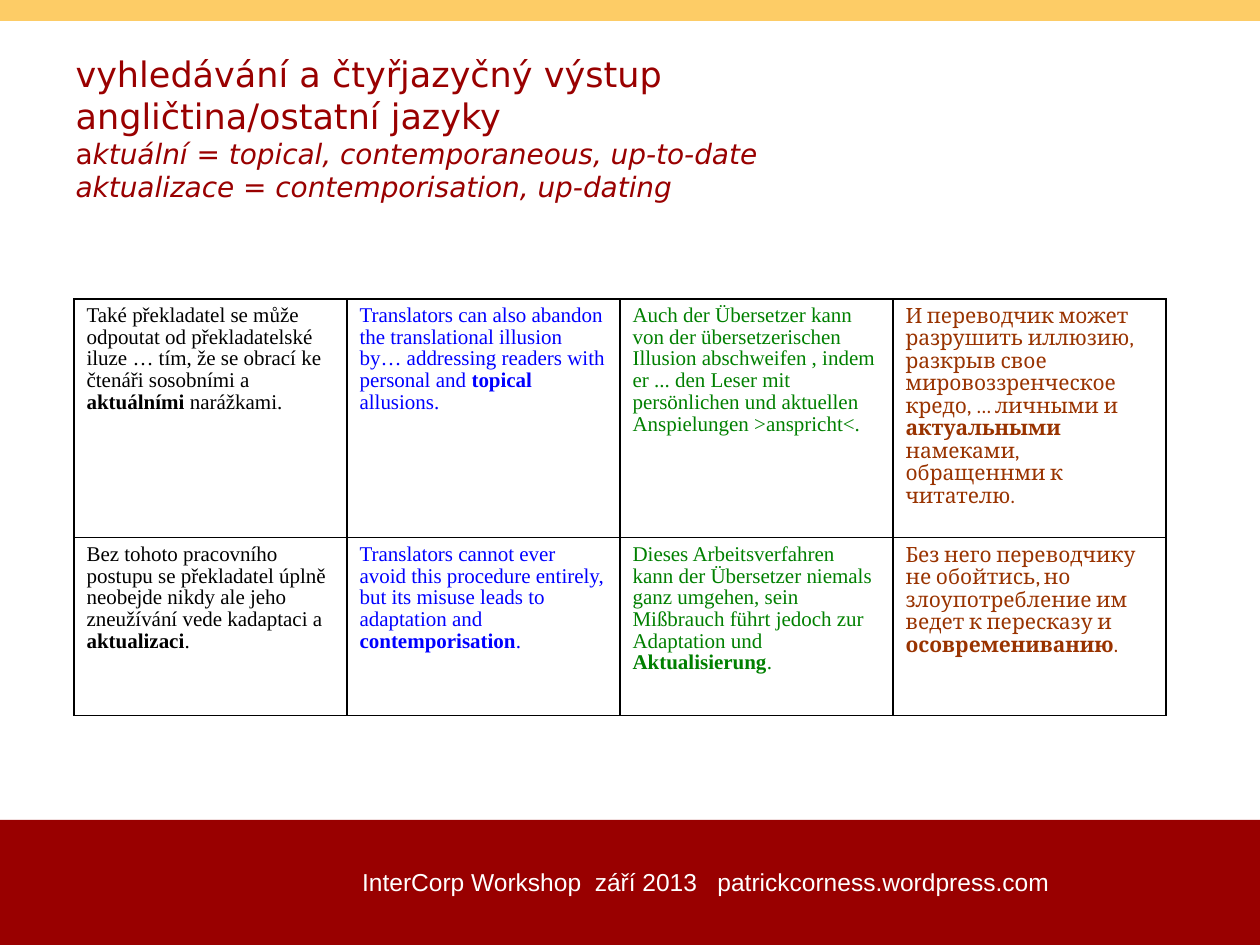
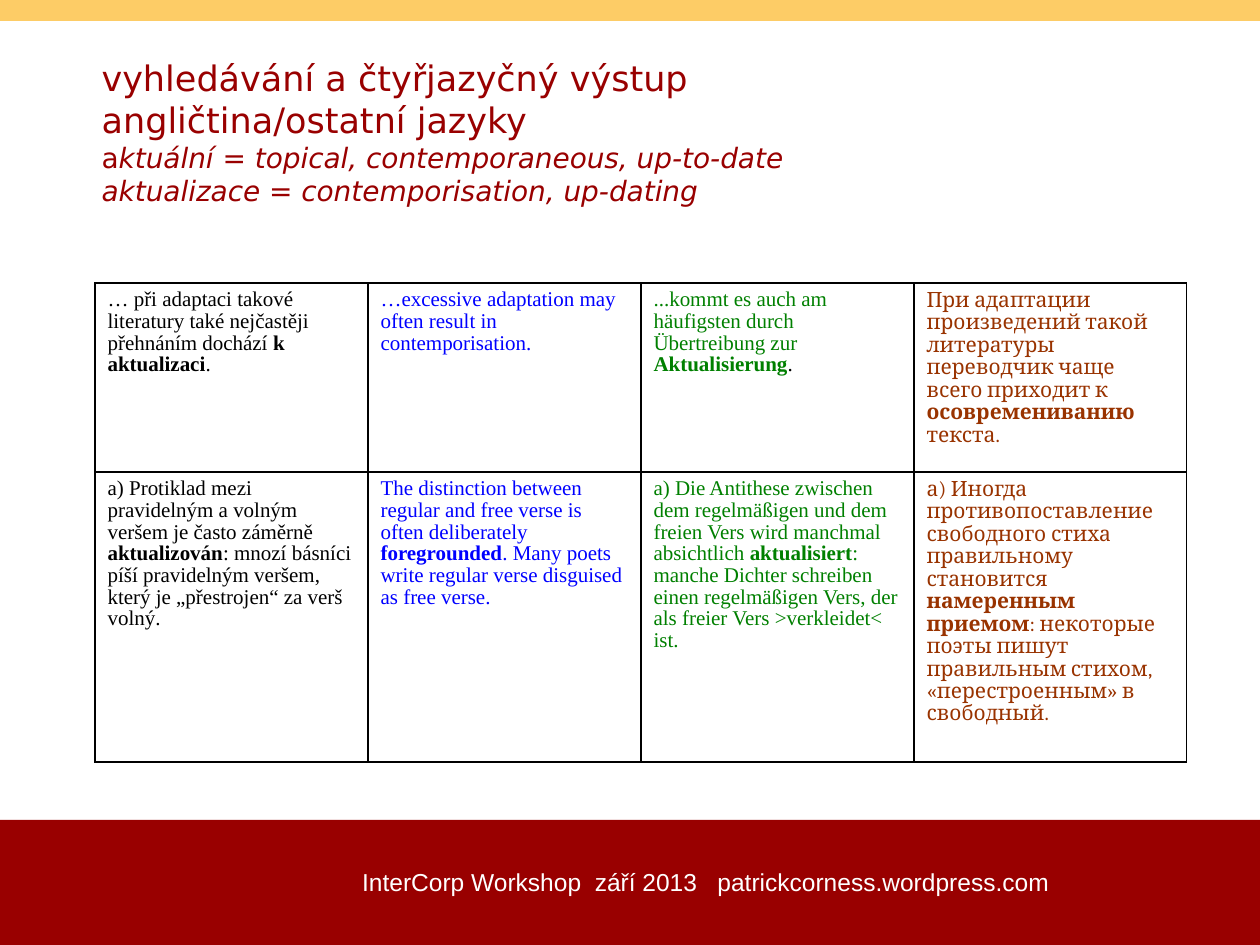
from copy import deepcopy
from typing import NamedTuple

import pptx
import pptx.dml.color
import pptx.enum.shapes
import pptx.enum.text
import pptx.oxml
import pptx.oxml.ns
import pptx.util

PX_PER_INCH = 126
SLIDE_WIDTH, SLIDE_HEIGHT = 1260, 945
TITLE_ONLY_LAYOUT = 5
COLUMN_WIDTH = 273
BORDER_WIDTH = pptx.util.Pt(0.75)
LINE_SPACING = 0.93

COLORS = {
    "maroon": "990000",
    "gold": "FDCC66",
    "white": "FFFFFF",
    "black": "000000",
    "blue": "0000FF",
    "green": "008000",
    "brown": "993300",
}

FOOTER = "InterCorp Workshop  září 2013   patrickcorness.wordpress.com"


class Box(NamedTuple):
    left: int
    top: int
    width: int
    height: int

    def emu(self) -> list[int]:
        return [px(length) for length in self]


class Style(NamedTuple):
    font: str
    size: int
    color: str
    bold: bool = False
    italic: bool = False


class Band(NamedTuple):
    box: Box
    color: str


class Excerpt(NamedTuple):
    """A passage in one language, with its keyword in bold."""
    before: str
    keyword: str = ""
    after: str = ""
    after_color: str = ""


class Page(NamedTuple):
    title_box: Box
    table_left: int
    table_top: int
    row_heights: list[int]
    rows: list[list[Excerpt]]


BANDS = [
    Band(Box(0, 820, SLIDE_WIDTH, 125), "maroon"),
    Band(Box(0, 0, SLIDE_WIDTH, 21), "gold"),
]
FOOTER_BOX = Box(324, 861, 764, 72)
FOOTER_STYLE = Style("Arial", 14, "white")

HEADING = Style("DejaVu Sans", 20, "maroon")
GLOSS = HEADING._replace(size=16)
GLOSS_ITALIC = GLOSS._replace(italic=True)
TITLE_LINES = [
    [("vyhledávání a čtyřjazyčný výstup", HEADING)],
    [("angličtina/ostatní jazyky", HEADING)],
    [("a", GLOSS),
     ("ktuální = topical, contemporaneous, up-to-date", GLOSS_ITALIC)],
    [("aktualizace = contemporisation, up-dating", GLOSS_ITALIC)],
]

# Czech, English, German, Russian
LANGUAGE_STYLES = [
    Style("Times New Roman", 12, "black"),
    Style("Times New Roman", 12, "blue"),
    Style("Times New Roman", 12, "green"),
    Style("Cambria", 12, "brown"),
]

PAGES = [
    Page(Box(63, 45, 1125, 166), 74, 299, [239, 178], [
        [
            Excerpt("Také překladatel se může odpoutat od překladatelské iluze … "
                    "tím, že se obrací ke čtenáři sosobními a ",
                    "aktuálními", " narážkami."),
            Excerpt("Translators can also abandon the translational illusion by… "
                    "addressing readers with personal and ",
                    "topical", " allusions."),
            Excerpt("Auch der Übersetzer kann von der übersetzerischen Illusion "
                    "abschweifen , indem er ... den Leser mit persönlichen und "
                    "aktuellen Anspielungen >anspricht<."),
            Excerpt("И переводчик может разрушить иллюзию, разкрыв свое "
                    "мировоззренческое кредо, … личными и ",
                    "актуальными", " намеками, обращеннми к читателю."),
        ],
        [
            Excerpt("Bez tohoto pracovního postupu se překladatel úplně neobejde "
                    "nikdy ale jeho zneužívání vede kadaptaci a ",
                    "aktualizaci", "."),
            Excerpt("Translators cannot ever avoid this procedure entirely, but "
                    "its misuse leads to adaptation and ",
                    "contemporisation", "."),
            Excerpt("Dieses Arbeitsverfahren kann der Übersetzer niemals ganz "
                    "umgehen, sein Mißbrauch führt jedoch zur Adaptation und ",
                    "Aktualisierung", "."),
            Excerpt("Без него переводчику не обойтись, но злоупотребление им "
                    "ведет к пересказу и ",
                    "осовремениванию", "."),
        ],
    ]),
    Page(Box(89, 49, 1071, 166), 95, 283, [189, 290], [
        [
            Excerpt("… při adaptaci takové literatury také nejčastěji přehnáním "
                    "dochází ", "k aktualizaci", "."),
            Excerpt("…excessive adaptation may often result in contemporisation."),
            Excerpt("...kommt es auch am häufigsten durch Übertreibung zur ",
                    "Aktualisierung", ".", "black"),
            Excerpt("При адаптации произведений такой литературы переводчик чаще "
                    "всего приходит к ", "осовремениванию ", "текста."),
        ],
        [
            Excerpt("a) Protiklad mezi pravidelným a volným veršem je často "
                    "záměrně ", "aktualizován",
                    ": mnozí básníci píší pravidelným veršem, který je "
                    "„přestrojen“ za verš volný."),
            Excerpt("The distinction between regular and free verse is often "
                    "deliberately ", "foregrounded",
                    ". Many poets write regular verse disguised as free verse."),
            Excerpt("a) Die Antithese zwischen dem regelmäßigen und dem freien "
                    "Vers wird manchmal absichtlich ", "aktualisiert",
                    ": manche Dichter schreiben einen regelmäßigen Vers, der als "
                    "freier Vers >verkleidet< ist."),
            Excerpt("а) Иногда противопоставление свободного стиха правильному "
                    "становится ", "намеренным приемом",
                    ": некоторые поэты пишут правильным стихом, "
                    "«перестроенным» в свободный."),
        ],
    ]),
]


def px(length: int) -> int:
    return round(length * pptx.util.Inches(1) / PX_PER_INCH)


def rgb(color: str) -> pptx.dml.color.RGBColor:
    return pptx.dml.color.RGBColor.from_string(COLORS[color])


def add_run(paragraph, text: str, style: Style):
    run = paragraph.add_run()
    run.text = text
    run.font.name = style.font
    run.font.size = pptx.util.Pt(style.size)
    run.font.bold = style.bold
    run.font.italic = style.italic
    run.font.color.rgb = rgb(style.color)
    return run


def move_bands_to_layout(slide) -> None:
    """Draw the bands on a slide, then hand them to its layout for all slides."""
    for position, band in enumerate(BANDS, start=2):
        shape = slide.shapes.add_shape(
            pptx.enum.shapes.MSO_SHAPE.RECTANGLE, *band.box.emu())
        shape.shadow.inherit = False
        shape.fill.solid()
        shape.fill.fore_color.rgb = rgb(band.color)
        shape.line.fill.background()
        slide.slide_layout.shapes.element.insert(position, shape.element)


def add_footer(slide) -> None:
    frame = slide.shapes.add_textbox(*FOOTER_BOX.emu()).text_frame
    frame.word_wrap = True
    paragraph = frame.paragraphs[0]
    paragraph.alignment = pptx.enum.text.PP_ALIGN.CENTER
    add_run(paragraph, FOOTER, FOOTER_STYLE)


def fill_title(slide, box: Box) -> None:
    title = slide.shapes.title
    title.left, title.top, title.width, title.height = box.emu()
    frame = title.text_frame
    frame.auto_size = pptx.enum.text.MSO_AUTO_SIZE.NONE
    frame.vertical_anchor = pptx.enum.text.MSO_ANCHOR.MIDDLE
    paragraph = frame.paragraphs[0]
    paragraph.alignment = pptx.enum.text.PP_ALIGN.LEFT
    last_run = None
    for line in TITLE_LINES:
        if last_run is not None:
            paragraph.add_line_break()
            # The break takes the size of the line it ends.
            line_break = paragraph.runs[-1].font and paragraph._p[-1]
            line_break.append(deepcopy(last_run._r.rPr))
        for text, style in line:
            last_run = add_run(paragraph, text, style)


def add_borders(cell) -> None:
    properties = cell._tc.get_or_add_tcPr()
    for position, side in enumerate("LRTB"):
        border = pptx.oxml.parse_xml(
            f'<a:ln{side} {pptx.oxml.ns.nsdecls("a")} w="{BORDER_WIDTH}">'
            f'<a:solidFill><a:srgbClr val="{COLORS["black"]}"/></a:solidFill>'
            f'</a:ln{side}>')
        properties.insert(position, border)


def fill_cell(cell, excerpt: Excerpt, style: Style) -> None:
    cell.fill.background()
    add_borders(cell)
    paragraph = cell.text_frame.paragraphs[0]
    paragraph.line_spacing = LINE_SPACING
    add_run(paragraph, excerpt.before, style)
    if excerpt.keyword:
        add_run(paragraph, excerpt.keyword, style._replace(bold=True))
        after_color = excerpt.after_color or style.color
        add_run(paragraph, excerpt.after, style._replace(color=after_color))


def add_excerpts(slide, page: Page) -> None:
    box = Box(page.table_left, page.table_top,
              COLUMN_WIDTH * len(LANGUAGE_STYLES), sum(page.row_heights))
    table = slide.shapes.add_table(
        len(page.rows), len(LANGUAGE_STYLES), *box.emu()).table
    table.first_row = table.horz_banding = False
    for column in table.columns:
        column.width = px(COLUMN_WIDTH)
    for row, height, excerpts in zip(table.rows, page.row_heights, page.rows):
        row.height = px(height)
        for cell, excerpt, style in zip(row.cells, excerpts, LANGUAGE_STYLES):
            fill_cell(cell, excerpt, style)


def main() -> None:
    deck = pptx.Presentation()
    deck.slide_width, deck.slide_height = px(SLIDE_WIDTH), px(SLIDE_HEIGHT)
    layout = deck.slide_layouts[TITLE_ONLY_LAYOUT]
    for number, page in enumerate(PAGES):
        slide = deck.slides.add_slide(layout)
        if number == 0:
            move_bands_to_layout(slide)
        add_footer(slide)
        fill_title(slide, page.title_box)
        add_excerpts(slide, page)
    deck.save("out.pptx")


if __name__ == "__main__":
    main()
